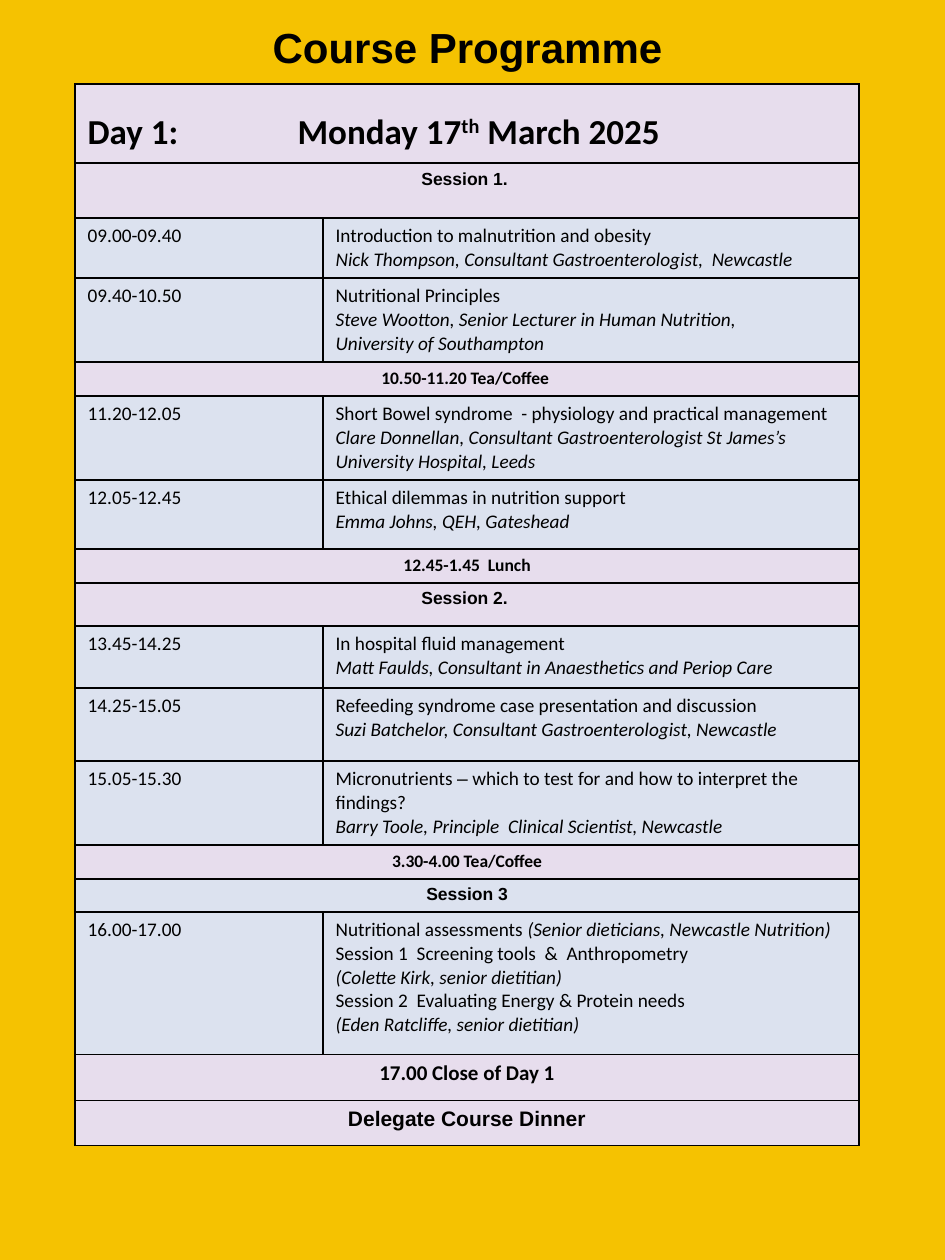
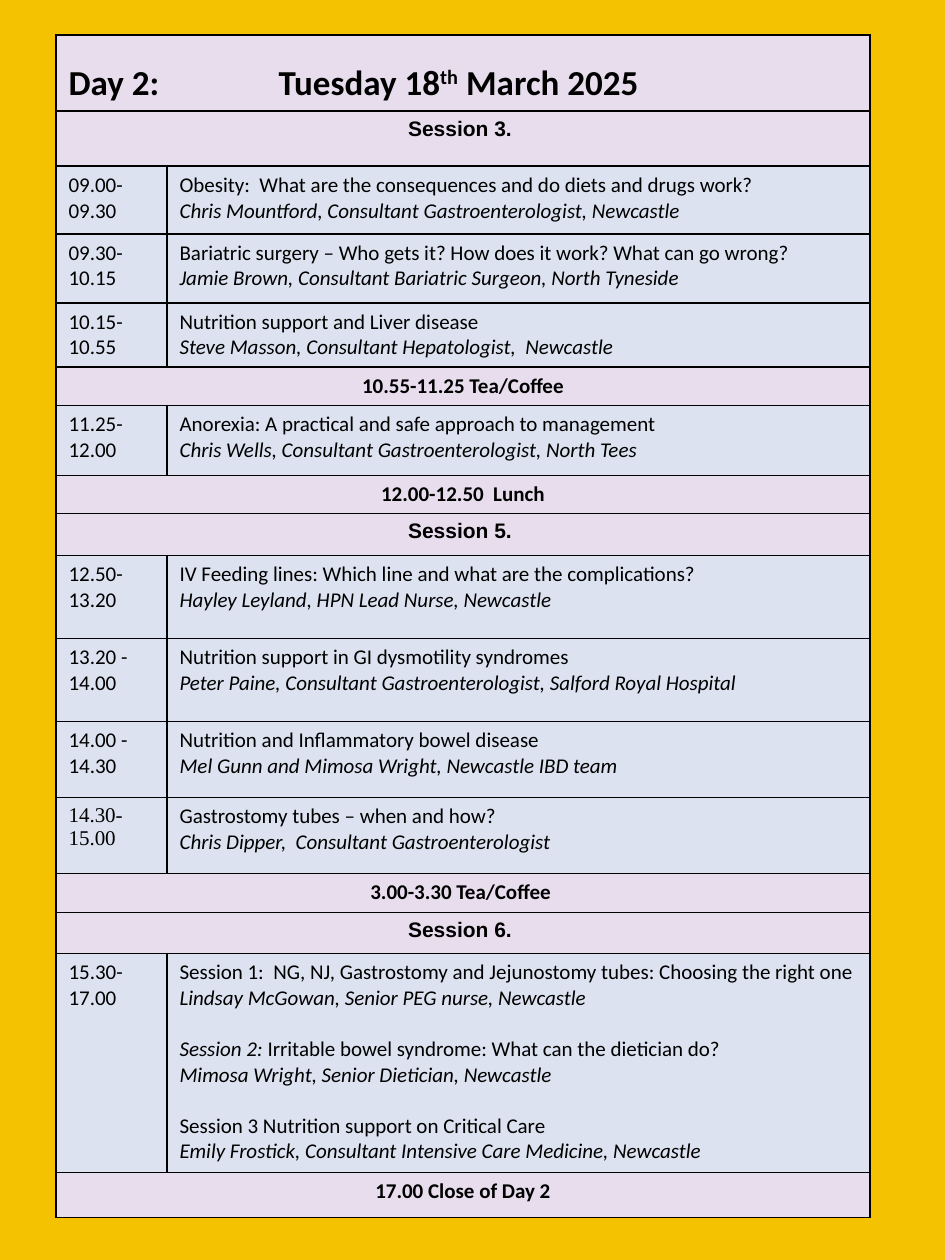
from pptx import Presentation
from pptx.dml.color import RGBColor
from pptx.enum.text import MSO_ANCHOR, MSO_AUTO_SIZE, PP_ALIGN
from pptx.oxml import parse_xml
from pptx.oxml.ns import nsdecls
from pptx.util import Pt

GOLD = RGBColor(0xF5, 0xC2, 0x01)
LILAC = RGBColor(0xE7, 0xDD, 0xED)
BLUE = RGBColor(0xDC, 0xE2, 0xEF)
BLACK = RGBColor(0, 0, 0)
ARIAL, CALIBRI, TIMES = "Arial", "Calibri", "Times New Roman"
TAB_STOP = 210

BANDS = {
    "session": dict(font=ARIAL, fill=LILAC),
    "workshops": dict(font=ARIAL, fill=BLUE),
    "break": dict(font=CALIBRI, fill=LILAC),
    "close": dict(font=CALIBRI, fill=LILAC, size=12),
    "dinner": dict(font=ARIAL, fill=LILAC, size=12),
}


def it(text, **fmt):
    """An italic run."""
    return text, dict(italic=True, **fmt)


# A paragraph is a string, one (text, format) run, or a list of runs.
# Rows are (kind, height, text), or ("talk", height, time, paragraphs).
DAY_1 = dict(
    left=75, top=84, columns=(248, 536), band_size=10, talk_size=11,
    rows=[
        ("day", 79, "Day 1:", "Monday 17", " March 2025"),
        ("session", 55, "Session 1. "),
        ("talk", 60, "09.00-09.40", [
            "Introduction to malnutrition and obesity",
            it("Nick Thompson, Consultant Gastroenterologist,  Newcastle")]),
        ("talk", 84, "09.40-10.50", [
            "Nutritional Principles",
            it("Steve Wootton, Senior Lecturer in Human Nutrition,"),
            it("University of Southampton")]),
        ("break", 34, "10.50-11.20 Tea/Coffee "),
        ("talk", 83, "11.20-12.05", [
            "Short Bowel syndrome  - physiology and practical management",
            it("Clare Donnellan, Consultant Gastroenterologist St James’s "
               "University Hospital, Leeds")]),
        ("talk", 69, "12.05-12.45", [
            "Ethical dilemmas in nutrition support",
            it("Emma Johns, QEH, Gateshead")]),
        ("break", 34, "12.45-1.45  Lunch"),
        ("session", 43, "Session 2. "),
        ("talk", 62, "13.45-14.25", [
            "In hospital fluid management",
            it("Matt Faulds, Consultant in Anaesthetics and Periop Care")]),
        ("talk", 73, "14.25-15.05", [
            "Refeeding syndrome case presentation and discussion",
            it("Suzi Batchelor, Consultant Gastroenterologist, Newcastle")]),
        ("talk", 84, "15.05-15.30", [
            ["Micronutrients ", ("–", dict(font=ARIAL)),
             " which to test for and how to interpret the findings?"],
            it("Barry Toole, Principle  Clinical Scientist, Newcastle")]),
        ("break", 34, "3.30-4.00 Tea/Coffee"),
        ("workshops", 33, "Session 3"),
        ("talk", 143, "16.00-17.00", [
            ["Nutritional assessments ",
             it("(Senior dieticians, Newcastle Nutrition)")],
            "Session 1  Screening tools  &  Anthropometry",
            it("(Colette Kirk, senior dietitian)"),
            "Session 2  Evaluating Energy & Protein needs",
            it("(Eden Ratcliffe, senior dietitian)")]),
        ("close", 46, "17.00 Close of Day 1"),
        ("dinner", 45, "Delegate Course Dinner"),
    ])

DAY_2 = dict(
    left=56, top=35, columns=(111, 703), band_size=12, talk_size=12,
    rows=[
        ("day", 76, "Day 2:", "Tuesday 18", " March 2025"),
        ("session", 55, "Session 3. "),
        ("talk", 68, "09.00-09.30", [
            "Obesity:  What are the consequences and do diets and drugs work?",
            it("Chris Mountford, Consultant Gastroenterologist, Newcastle")]),
        ("talk", 69, "09.30-10.15", [
            "Bariatric surgery – Who gets it? How does it work? What can go wrong?",
            it("Jamie Brown, Consultant Bariatric Surgeon, North Tyneside")]),
        ("talk", 64, "10.15-10.55", [
            "Nutrition support and Liver disease",
            it("Steve Masson, Consultant Hepatologist,  Newcastle")]),
        ("break", 38, "10.55-11.25 Tea/Coffee"),
        ("talk", 70, "11.25-12.00", [
            "Anorexia: A practical and safe approach to management",
            it("Chris Wells, Consultant Gastroenterologist, North Tees")]),
        ("break", 38, "12.00-12.50  Lunch"),
        ("session", 42, "Session 5. "),
        ("talk", 83, "12.50-13.20", [
            "IV Feeding lines: Which line and what are the complications?",
            it("Hayley Leyland, HPN Lead Nurse, Newcastle")]),
        ("talk", 83, "13.20 - 14.00", [
            "Nutrition support in GI dysmotility syndromes",
            it("Peter Paine, Consultant Gastroenterologist, Salford Royal Hospital")]),
        ("talk", 76, "14.00 - 14.30", [
            "Nutrition and Inflammatory bowel disease",
            it("Mel Gunn and Mimosa Wright, Newcastle IBD team")]),
        ("talk", 76, [("14.30-", dict(font=TIMES)), ("15.00", dict(font=TIMES))], [
            "Gastrostomy tubes – when and how?",
            it("Chris Dipper,  Consultant Gastroenterologist")]),
        ("break", 39, "3.00-3.30 Tea/Coffee "),
        ("session", 41, "Session 6. "),
        ("talk", 219, "15.30-17.00", [
            "Session 1:  NG, NJ, Gastrostomy and Jejunostomy tubes: "
            "Choosing the right one",
            it("Lindsay McGowan, Senior PEG nurse, Newcastle"),
            [it("Session 2: ", gap=14.6),
             "Irritable bowel syndrome: What can the dietician do?"],
            it("Mimosa Wright, Senior Dietician, Newcastle"),
            ("Session 3 Nutrition support on Critical Care", dict(gap=14.6)),
            it("Emily Frostick, Consultant Intensive Care Medicine, Newcastle")]),
        ("close", 45, "17.00 Close of Day 2"),
    ])


def px(n):
    return round(n * 914400 / 126)


def write(tf, paragraphs, align=PP_ALIGN.LEFT, **base):
    if isinstance(paragraphs, str):
        paragraphs = [paragraphs]
    for i, runs in enumerate(paragraphs):
        p = tf.add_paragraph() if i else tf.paragraphs[0]
        p.alignment = align
        for run in runs if isinstance(runs, list) else [runs]:
            text, own = (run, {}) if isinstance(run, str) else run
            fmt = {**base, **own}
            if "gap" in fmt:
                p.space_before = Pt(fmt["gap"])
            r = p.add_run()
            r.text = text
            r.font.name = fmt.get("font", CALIBRI)
            r.font.size = Pt(fmt["size"])
            r.font.bold = fmt.get("bold", False)
            r.font.italic = fmt.get("italic", False)
            r.font.color.rgb = BLACK
            if fmt.get("superscript"):
                r._r.get_or_add_rPr().set("baseline", "30000")


def paint(cell, color):
    """Fill a cell and give it thin black borders."""
    cell.fill.solid()
    cell.fill.fore_color.rgb = color
    tcPr = cell._tc.get_or_add_tcPr()
    for i, side in enumerate("LRTB"):
        tcPr.insert(i, parse_xml(
            f'<a:ln{side} {nsdecls("a")} w="12700"><a:solidFill>'
            f'<a:srgbClr val="{BLACK}"/></a:solidFill></a:ln{side}>'))


def write_day(cell, name, date, year):
    cell.margin_top = px(27)
    p = cell.text_frame.paragraphs[0]
    p._p.get_or_add_pPr().append(parse_xml(
        f'<a:tabLst {nsdecls("a")}><a:tab pos="{px(TAB_STOP)}" algn="l"/></a:tabLst>'))
    write(cell.text_frame,
          [[f"{name}\t{date}", ("th", dict(superscript=True)), year]],
          size=20, bold=True)


def add_programme(s, day):
    rows, columns = day["rows"], day["columns"]
    table = s.shapes.add_table(
        len(rows), len(columns), px(day["left"]), px(day["top"]),
        px(sum(columns)), px(sum(row[1] for row in rows))).table
    table.first_row = table.horz_banding = False
    for column, width in zip(table.columns, columns):
        column.width = px(width)
    for i, (kind, height, *content) in enumerate(rows):
        table.rows[i].height = px(height)
        first, second = table.cell(i, 0), table.cell(i, 1)
        band = BANDS.get(kind, {})
        color = BLUE if kind == "talk" else band.get("fill", LILAC)
        for cell in (first, second):
            paint(cell, color)
        if kind == "talk":
            for cell, paragraphs in zip((first, second), content):
                write(cell.text_frame, paragraphs, size=day["talk_size"])
            continue
        first.merge(second)
        if kind == "day":
            write_day(first, *content)
        else:
            write(first.text_frame, content, align=PP_ALIGN.CENTER, bold=True,
                  font=band["font"], size=band.get("size", day["band_size"]))


def add_title(s, text):
    title = s.shapes.title
    title.left, title.top, title.width, title.height = map(px, (160, 15, 615, 64))
    tf = title.text_frame
    tf.auto_size = MSO_AUTO_SIZE.NONE
    tf.vertical_anchor = MSO_ANCHOR.MIDDLE
    write(tf, text, align=PP_ALIGN.CENTER, font=ARIAL, size=24, bold=True)


def main():
    prs = Presentation()
    prs.slide_width, prs.slide_height = px(945), px(1260)
    background = prs.slide_master.background.fill
    background.solid()
    background.fore_color.rgb = GOLD
    title_only, blank = prs.slide_layouts[5], prs.slide_layouts[6]

    s = prs.slides.add_slide(title_only)
    add_title(s, "Course Programme")
    add_programme(s, DAY_1)
    add_programme(prs.slides.add_slide(blank), DAY_2)
    prs.save("out.pptx")


if __name__ == "__main__":
    main()
